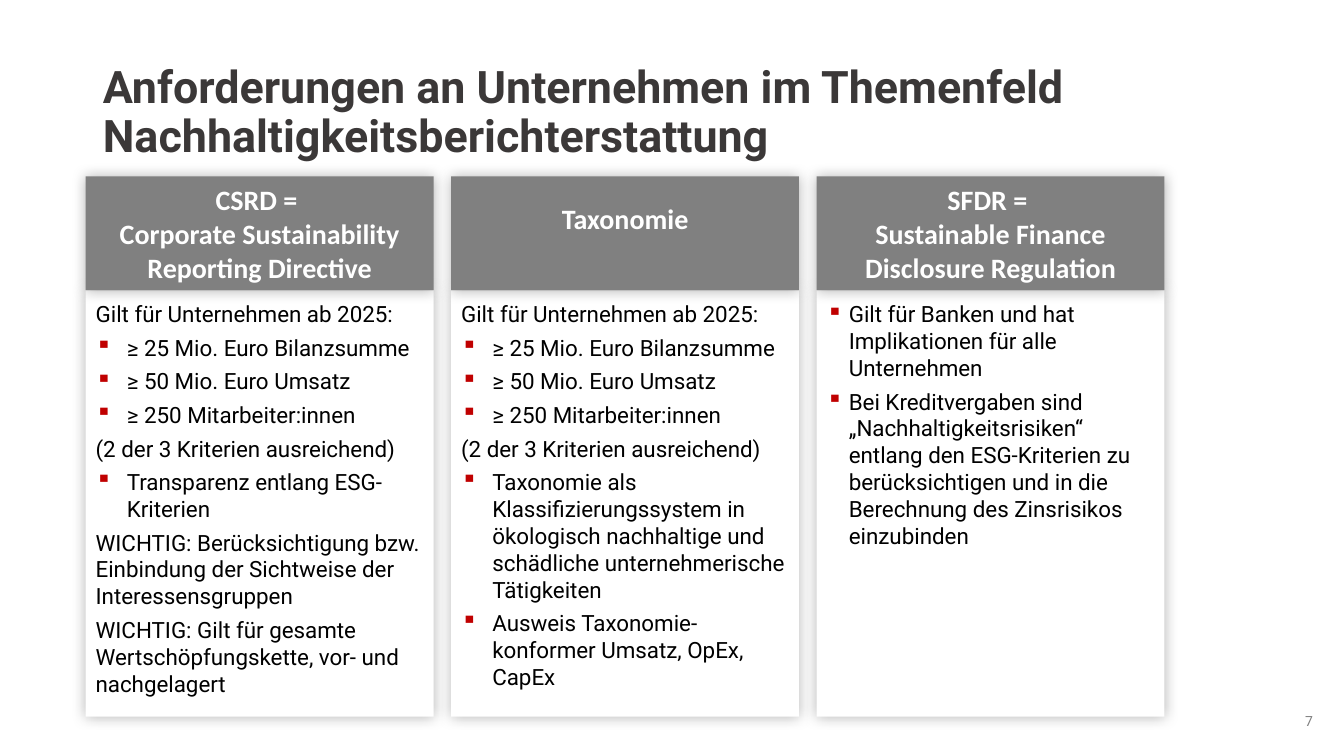
from lxml import etree
from pptx import Presentation
from pptx.dml.color import RGBColor
from pptx.enum.shapes import MSO_SHAPE
from pptx.enum.text import MSO_ANCHOR, MSO_AUTO_SIZE, PP_ALIGN
from pptx.oxml.ns import qn
from pptx.util import Inches, Pt

RECTANGLE = MSO_SHAPE.RECTANGLE
TOP, MIDDLE = MSO_ANCHOR.TOP, MSO_ANCHOR.MIDDLE
LEFT, CENTER, RIGHT = PP_ALIGN.LEFT, PP_ALIGN.CENTER, PP_ALIGN.RIGHT
NO_AUTOFIT = MSO_AUTO_SIZE.NONE

COLUMN_LEFT, COLUMN_WIDTH = 0.85, 3.45
COLUMN_PITCH = 7.25 / 2
HEADER_TOP, HEADER_HEIGHT = 1.75, 1.13
BODY_TOP, BODY_HEIGHT = HEADER_TOP + HEADER_HEIGHT, 4.23

TITLE_FONT = {"name": "Roboto", "size": Pt(32), "bold": True}
NUMBER_FONT = {"name": "Roboto", "size": Pt(10)}
HEADER_FONT = {"name": "Calibri", "size": Pt(20), "bold": True}
BODY_FONT = {"name": "Roboto", "size": Pt(16)}

TITLE = "Anforderungen an Unternehmen im Themenfeld Nachhaltigkeitsberichterstattung"
BULLET = "▪"
CRITERIA = [
    ("", "Gilt für Unternehmen ab 2025:"),
    (BULLET, "≥ 25 Mio. Euro Bilanzsumme"),
    (BULLET, "≥ 50 Mio. Euro Umsatz"),
    (BULLET, "≥ 250 Mitarbeiter:innen"),
    ("", "(2 der 3 Kriterien ausreichend)"),
]
COLUMNS = [
    ("CSRD = \vCorporate Sustainability Reporting Directive", 0.31, CRITERIA + [
        (BULLET, "Transparenz entlang ESG-Kriterien"),
        ("", "WICHTIG: Berücksichtigung bzw. Einbindung der Sichtweise der Interessensgruppen"),
        ("", "WICHTIG: Gilt für gesamte Wertschöpfungskette, vor- und nachgelagert"),
    ]),
    ("Taxonomie\v", 0.31, CRITERIA + [
        (BULLET, "Taxonomie als Klassifizierungssystem in ökologisch nachhaltige "
                 "und schädliche unternehmerische Tätigkeiten"),
        (BULLET, "Ausweis Taxonomie-konformer Umsatz, OpEx, CapEx"),
    ]),
    ("SFDR = \vSustainable Finance Disclosure Regulation", 0.22, [
        (BULLET, "Gilt für Banken und hat Implikationen für alle Unternehmen"),
        (BULLET, "Bei Kreditvergaben sind „Nachhaltigkeitsrisiken“ entlang den ESG-Kriterien "
                 "zu berücksichtigen und in die Berechnung des Zinsrisikos einzubinden"),
    ]),
]


def set_values(target, values):
    """Set attributes from a dict."""
    for name, value in values.items():
        setattr(target, name, value)


def color(hex_string):
    """Turn a hex string into a colour."""
    return RGBColor.from_string(hex_string)


def write(para, text, font, hex_string, alignment=LEFT):
    """Fill a paragraph with formatted text."""
    para.text = text
    para.alignment = alignment
    for span in para.runs:
        set_values(span.font, font)
        span.font.color.rgb = color(hex_string)


def set_frame(box, inset, anchor):
    """Set wrapping, insets and anchor of a box's text."""
    values = {"word_wrap": True, "auto_size": NO_AUTOFIT, "vertical_anchor": anchor}
    for side in ("left", "top", "right", "bottom"):
        values[f"margin_{side}"] = Inches(inset)
    set_values(box.text_frame, values)


def add_bullet(para, indent):
    """Give a paragraph a red square bullet with a hanging indent."""
    properties = para._p.get_or_add_pPr()
    properties.set("marL", str(Inches(indent)))
    properties.set("indent", str(-Inches(indent)))
    bullet_color = etree.SubElement(properties, qn("a:buClr"))
    etree.SubElement(bullet_color, qn("a:srgbClr"), val="C00000")
    etree.SubElement(properties, qn("a:buChar"), char=BULLET)


def add_soft_shadow(box):
    """Surround a box with a soft shadow."""
    box.shadow.inherit = False
    effects = box._element.spPr.find(qn("a:effectLst"))
    shadow = etree.SubElement(effects, qn("a:outerShdw"), blurRad=str(Pt(10)),
                              dist="0", dir="0", algn="ctr", rotWithShape="0")
    shade = etree.SubElement(shadow, qn("a:srgbClr"), val="000000")
    etree.SubElement(shade, qn("a:alpha"), val="30000")


def add_panel(page, column, top, height, fill):
    """Add a filled rectangle in one column."""
    box = page.shapes.add_shape(RECTANGLE, Inches(COLUMN_LEFT + column * COLUMN_PITCH),
                                Inches(top), Inches(COLUMN_WIDTH), Inches(height))
    box.fill.solid()
    box.fill.fore_color.rgb = color(fill)
    box.line.fill.background()
    add_soft_shadow(box)
    return box


def add_body(page, column, indent, items):
    """Add the white panel with a column's requirements."""
    box = add_panel(page, column, BODY_TOP, BODY_HEIGHT, "FFFFFF")
    set_frame(box, 0.1, TOP)
    for index, (bullet, text) in enumerate(items):
        para = box.text_frame.add_paragraph() if index else box.text_frame.paragraphs[0]
        if bullet:
            add_bullet(para, indent)
        write(para, text, BODY_FONT, "000000")
        if index:
            para.space_before = Pt(4.8)


def add_header(page, column, text):
    """Add the grey heading of a column."""
    box = add_panel(page, column, HEADER_TOP, HEADER_HEIGHT, "808080")
    set_frame(box, 0.08, MIDDLE)
    write(box.text_frame.paragraphs[0], text, HEADER_FONT, "FFFFFF", CENTER)


def add_title(page):
    """Place and format the title."""
    title = page.shapes.title
    set_values(title, {"left": Inches(0.92), "top": Inches(0.4),
                       "width": Inches(10.63), "height": Inches(1.45)})
    set_frame(title, 0.1, MIDDLE)
    para = title.text_frame.paragraphs[0]
    write(para, TITLE, TITLE_FONT, "3B3838")
    para.line_spacing = 0.9


def add_page_number(page):
    """Add the page number at the lower right."""
    box = page.shapes.add_textbox(Inches(11.81), Inches(6.95), Inches(1.31), Inches(0.4))
    set_frame(box, 0.1, MIDDLE)
    write(box.text_frame.paragraphs[0], "7", NUMBER_FONT, "808080", RIGHT)


def main():
    """Build and save the slide."""
    deck = Presentation()
    set_values(deck, {"slide_width": Inches(13.33), "slide_height": Inches(7.5)})
    page = deck.slides.add_slide(deck.slide_layouts[5])
    add_title(page)
    add_page_number(page)
    for column, (heading, indent, items) in enumerate(COLUMNS):
        add_body(page, column, indent, items)
        add_header(page, column, heading)
    deck.save("out.pptx")


if __name__ == "__main__":
    main()
